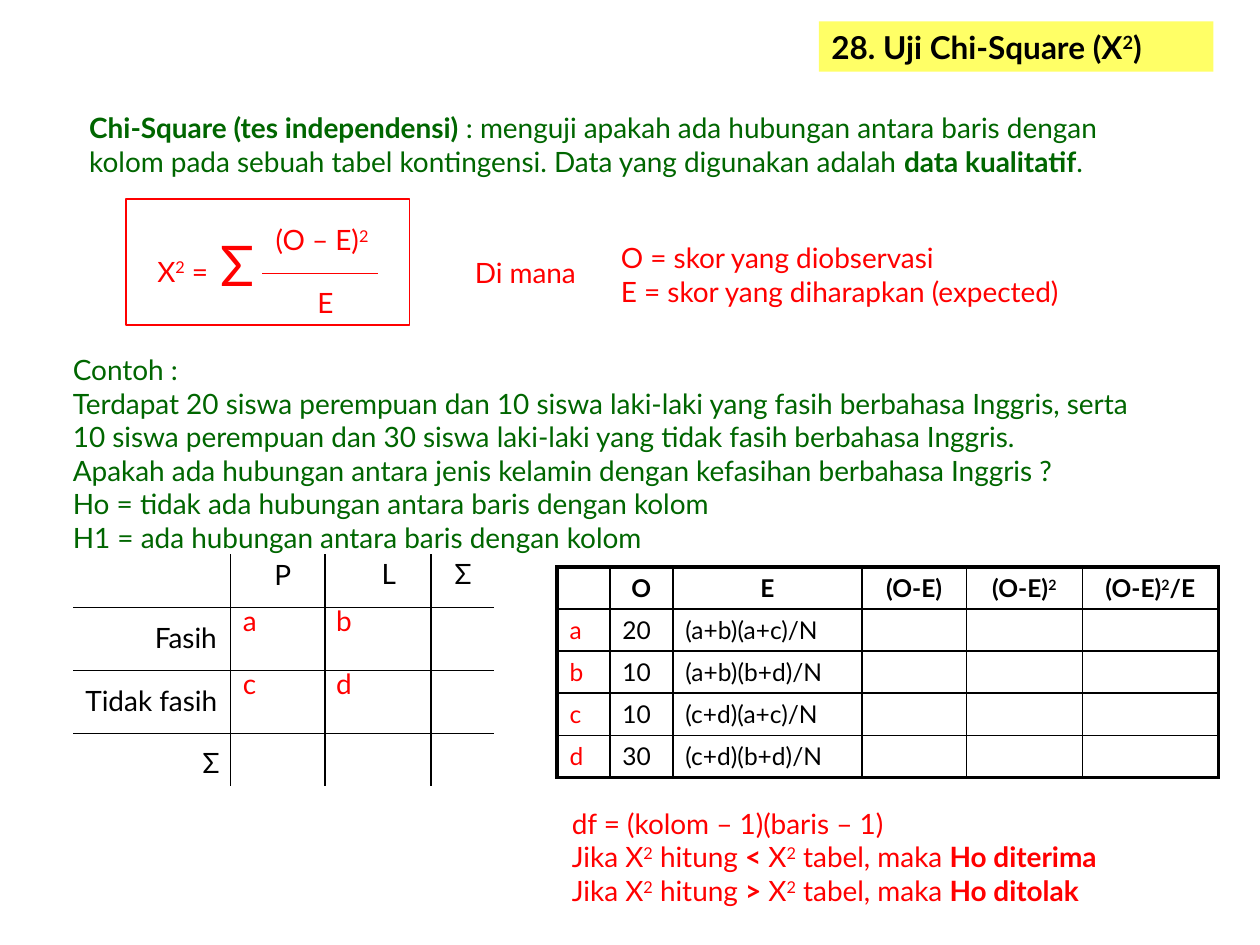
"""Builds the Chi-Square test slide: formula, worked example and tables."""
from dataclasses import dataclass

from lxml import etree
from pptx import Presentation
from pptx.dml.color import RGBColor
from pptx.enum import shapes, text
from pptx.oxml import ns
from pptx.util import Inches, Pt


@dataclass(frozen=True)
class Theme:
    font: str = "Lato"
    black: str = "000000"
    red: str = "FF0000"
    green: str = "006600"
    yellow: str = "FFFF66"
    title: float = 18
    body: float = 16
    cell: float = 14
    sigma: float = 32
    thin: float = 0.75
    grid: float = 1
    frame: float = 2.25


THEME = Theme()


@dataclass(frozen=True)
class Passage:
    left: float
    top: float
    width: float
    lines: tuple[str, ...]
    color: str = THEME.black
    size: float = THEME.body
    height: float = 0.37


@dataclass(frozen=True)
class Rule:
    x1: float
    y1: float
    x2: float
    y2: float
    color: str = THEME.black


def apply(target, values: dict) -> None:
    for name, value in values.items():
        setattr(target, name, value)


def write_line(paragraph, line: str, size: float, color: str) -> None:
    """Write one line in which * toggles bold and ^ toggles superscript."""
    for bold_index, stretch in enumerate(line.split("*")):
        for raised_index, piece in enumerate(stretch.split("^")):
            if not piece:
                continue
            run = paragraph.add_run()
            run.text = piece
            apply(run.font, {"name": THEME.font, "size": Pt(size), "bold": bold_index % 2 == 1})
            run.font.color.rgb = RGBColor.from_string(color)
            if raised_index % 2:
                run.font._element.set("baseline", "30000")


def write_passage(slide, passage: Passage):
    box = slide.shapes.add_textbox(Inches(passage.left), Inches(passage.top),
                                   Inches(passage.width), Inches(passage.height))
    frame = box.text_frame
    apply(frame, {"word_wrap": True, "auto_size": text.MSO_AUTO_SIZE.SHAPE_TO_FIT_TEXT,
                  "margin_right": 0})
    for index, line in enumerate(passage.lines):
        paragraph = frame.add_paragraph() if index else frame.paragraphs[0]
        write_line(paragraph, line, passage.size, passage.color)
    return box


def draw_rule(slide, rule: Rule) -> None:
    connector = slide.shapes.add_connector(
        shapes.MSO_CONNECTOR.STRAIGHT, Inches(rule.x1), Inches(rule.y1),
        Inches(rule.x2), Inches(rule.y2))
    connector.line.color.rgb = RGBColor.from_string(rule.color)
    connector.line.width = Pt(THEME.thin)
    etree.SubElement(connector._element.spPr, ns.qn("a:effectLst"))


def draw_border(cell, side: str, width: float) -> None:
    edge = etree.SubElement(cell._tc.get_or_add_tcPr(), ns.qn(f"a:ln{side}"), w=str(Pt(width)))
    fill = etree.SubElement(edge, ns.qn("a:solidFill"))
    etree.SubElement(fill, ns.qn("a:srgbClr"), val=THEME.black)


def draw_formula_frame(slide) -> None:
    frame = slide.shapes.add_shape(shapes.MSO_SHAPE.RECTANGLE, Inches(1), Inches(1.58),
                                   Inches(2.25), Inches(1))
    frame.shadow.inherit = False
    frame.fill.background()
    frame.line.color.rgb = RGBColor.from_string(THEME.red)
    frame.line.width = Pt(THEME.thin)


def draw_calculation_table(slide) -> None:
    headings = ("", "O", "E", "(O-E)", "(O-E)^2^", "(O-E)^2^/E")
    observations = (("a", "20", "(a+b)(a+c)/N"), ("b", "10", "(a+b)(b+d)/N"),
                    ("c", "10", "(c+d)(a+c)/N"), ("d", "30", "(c+d)(b+d)/N"))
    rows = [tuple(f"*{heading}*" if heading else "" for heading in headings)]
    rows += [observation + ("",) * 3 for observation in observations]
    widths = (0.42, 0.5, 1.5, 0.83, 0.92, 1.08)
    row_height = 1.67 / len(rows)
    table = slide.shapes.add_table(len(rows), len(widths), Inches(4.42), Inches(4.5),
                                   Inches(sum(widths)), Inches(1.67)).table
    apply(table, {"first_row": False, "horz_banding": False})
    for column, width in zip(table.columns, widths):
        column.width = Inches(width)
    for row_index, row in enumerate(rows):
        table.rows[row_index].height = Inches(row_height)
        for column_index, content in enumerate(row):
            cell = table.cell(row_index, column_index)
            outer = {"L": column_index == 0, "R": column_index == len(widths) - 1,
                     "T": row_index == 0, "B": row_index == len(rows) - 1}
            for side, is_outer in outer.items():
                draw_border(cell, side, THEME.frame if is_outer else THEME.grid)
            cell.fill.background()
            if not content:
                apply(cell, {"margin_top": 0, "margin_bottom": 0})
                continue
            paragraph = cell.text_frame.paragraphs[0]
            if row_index == 0:
                paragraph.alignment = text.PP_ALIGN.CENTER
            color = THEME.red if row_index and column_index == 0 else THEME.black
            write_line(paragraph, content, THEME.cell, color)


def main() -> None:
    deck = Presentation()
    apply(deck, {"slide_width": Inches(10), "slide_height": Inches(7.5)})
    slide = deck.slides.add_slide(deck.slide_layouts[6])

    heading = write_passage(slide, Passage(6.5, 0.17, 3.13, ("*28. Uji Chi-Square (X^2^)*",),
                                           size=THEME.title, height=0.4))
    heading.fill.solid()
    heading.fill.fore_color.rgb = RGBColor.from_string(THEME.yellow)

    explanations = (
        Passage(0.61, 0.83, 8.89, (
            "*Chi-Square (tes independensi)* : menguji apakah ada hubungan antara baris dengan",
            "kolom pada sebuah tabel kontingensi. Data yang digunakan adalah *data kualitatif*.",
        ), THEME.green, height=0.64),
        Passage(1.15, 1.97, 0.64, ("X^2^ =",), THEME.red),
        Passage(2.09, 1.72, 1, ("(O – E)^2^",), THEME.red),
        Passage(2.42, 2.22, 0.33, ("E",), THEME.red),
        Passage(1.65, 1.78, 0.45, ("Σ",), THEME.red, THEME.sigma, 0.63),
        Passage(3.67, 1.98, 1.02, ("Di mana",), THEME.red),
        Passage(4.83, 1.86, 3.86, (
            "O = skor yang diobservasi",
            "E = skor yang diharapkan (expected)",
        ), THEME.red, height=0.64),
        Passage(0.48, 2.75, 8.92, (
            "Contoh :",
            "Terdapat 20 siswa perempuan dan 10 siswa laki-laki yang fasih berbahasa Inggris, serta",
            "10 siswa perempuan dan 30 siswa laki-laki yang tidak fasih berbahasa Inggris.",
            "Apakah ada hubungan antara jenis kelamin dengan kefasihan berbahasa Inggris ?",
            "Ho = tidak ada hubungan antara baris dengan kolom",
            "H1 = ada hubungan antara baris dengan kolom",
        ), THEME.green, height=1.7),
        Passage(4.44, 6.35, 4.68, (
            "df = (kolom – 1)(baris – 1)",
            "Jika X^2^ hitung *<* X^2^ tabel, maka *Ho diterima*",
            "Jika X^2^ hitung *>* X^2^ tabel, maka *Ho ditolak*",
        ), THEME.red, height=0.9),
    )
    contingency_labels = (
        Passage(2.93, 4.37, 0.31, ("L",)),
        Passage(2.08, 4.38, 0.32, ("P",)),
        Passage(1.13, 4.88, 0.71, ("Fasih",)),
        Passage(0.58, 5.38, 1.26, ("Tidak fasih",)),
        Passage(3.51, 4.37, 0.32, ("Σ",)),
        Passage(1.51, 5.87, 0.32, ("Σ",)),
    )
    frequencies = tuple(
        Passage(left, top, 0.32, (letter,), THEME.red)
        for top, letters in ((4.74, "ab"), (5.24, "cd"))
        for left, letter in zip((1.83, 2.57), letters))
    for passage in explanations + contingency_labels + frequencies:
        write_passage(slide, passage)

    fraction_bar = Rule(2.08, 2.17, 3, 2.17, THEME.red)
    column_rules = [Rule(x, 4.4, x, 6.24) for x in (1.83, 2.58, 3.42)]
    row_rules = [Rule(0.58, y, 3.92, y) for y in (4.82, 5.32, 5.82)]
    for rule in [fraction_bar, *column_rules, *row_rules]:
        draw_rule(slide, rule)

    draw_formula_frame(slide)
    draw_calculation_table(slide)
    deck.save("out.pptx")


if __name__ == "__main__":
    main()
